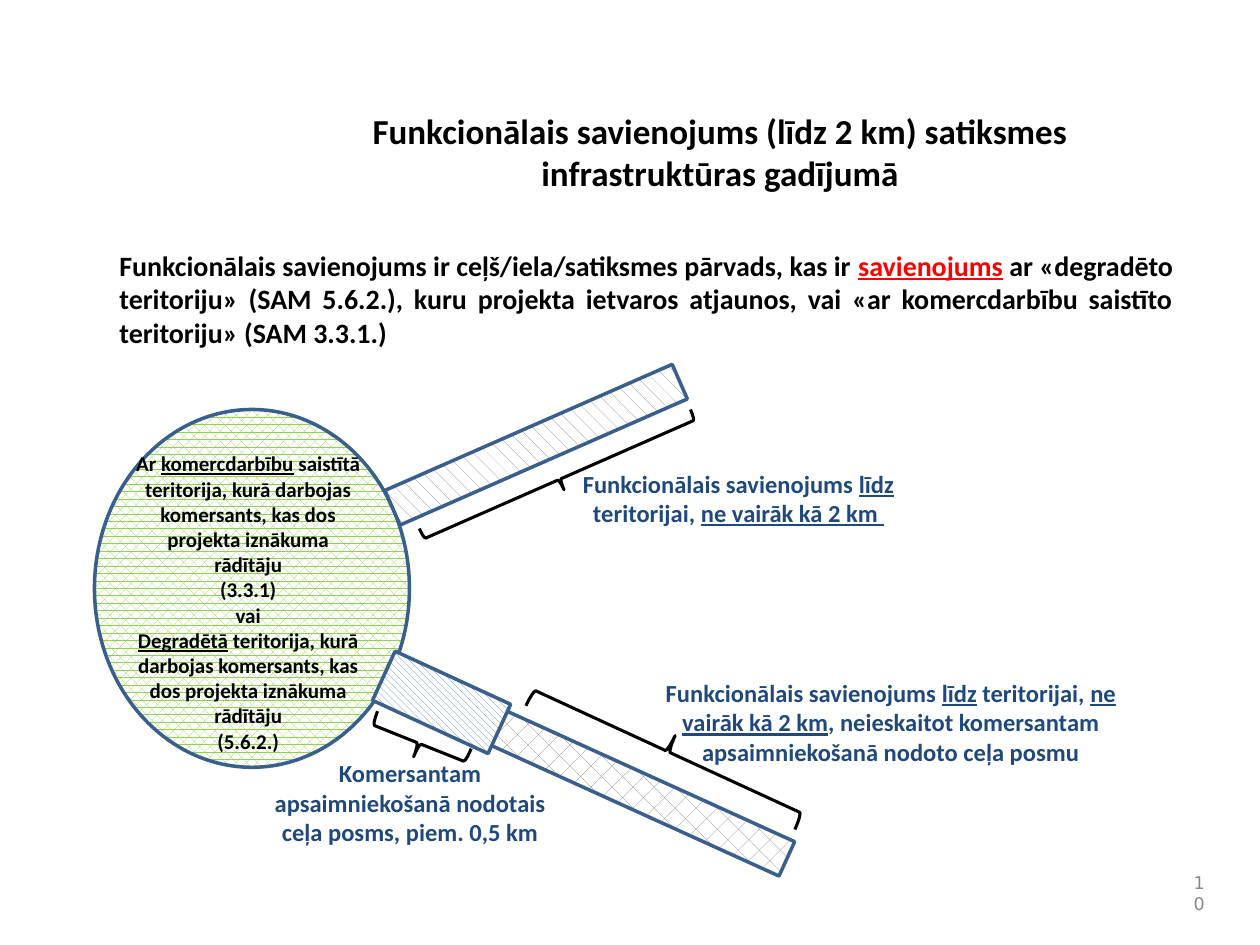
from pptx import Presentation
from pptx import util as u
from pptx.dml.color import RGBColor
from pptx.enum import dml, shapes, text

BLACK, NAVY, RED, GREY, WHITE = "000000", "1F497D", "FF0000", "898989", "FFFFFF"
OUTLINE = "3A5F8C"
RECT = shapes.MSO_SHAPE.RECTANGLE
OVAL = shapes.MSO_SHAPE.OVAL
BRACE = shapes.MSO_SHAPE.RIGHT_BRACE
PATTERN = dml.MSO_PATTERN
ALIGN = text.PP_ALIGN

TITLE = [["Funkcionālais savienojums (līdz 2 km) satiksmes infrastruktūras gadījumā"]]
DEFINITION = [[
    "Funkcionālais savienojums ir ceļš/iela/satiksmes pārvads, kas ir ",
    ("savienojums", RED),
    " ar «degradēto teritoriju» (SAM 5.6.2.), kuru projekta ietvaros atjaunos,"
    " vai «ar komercdarbību saistīto teritoriju» (SAM 3.3.1.)",
]]
TERRITORY = [
    ["Ar ", ("komercdarbību", BLACK),
     " saistītā teritorija, kurā darbojas komersants, kas dos projekta iznākuma rādītāju"],
    ["(3.3.1)"],
    ["vai"],
    [("Degradētā", BLACK),
     " teritorija, kurā darbojas komersants, kas dos projekta iznākuma rādītāju"],
    ["(5.6.2.)"],
]
UPPER_LABEL = [["Funkcionālais savienojums ", ("līdz", NAVY), " teritorijai, ",
                ("ne vairāk kā 2 km ", NAVY)]]
LOWER_LABEL = [["Funkcionālais savienojums ", ("līdz", NAVY), " teritorijai, ",
                ("ne vairāk kā 2 km", NAVY),
                ", neieskaitot komersantam apsaimniekošanā nodoto ceļa posmu"]]
HANDOVER_LABEL = [["Komersantam apsaimniekošanā nodotais ceļa posms, piem. 0,5 km"]]

DIAGRAM = [
    (OVAL, (0.75, 3.25, 2.5, 2.84), 0, (PATTERN.PERCENT_60, "92D050")),
    (RECT, (3.01, 3.38, 2.49, 0.3), 336.3, (PATTERN.SHINGLE, "808080")),
    (BRACE, (4.35, 2.63, 0.18, 2.35), 66.3, None),
    (RECT, (2.93, 5.95, 3.47, 0.3), 24.4, (PATTERN.DIAGONAL_BRICK, "808080")),
    (RECT, (3, 5.36, 1.01, 0.43), 24.7, (PATTERN.WIDE_DOWNWARD_DIAGONAL, "4F81BD")),
    (BRACE, (5.16, 4.79, 0.28, 2.35), 294.7, None),
    (BRACE, (3.21, 5.5, 0.23, 0.8), 111.8, None),
]
TEXTS = [
    (DEFINITION, (0.85, 1.92, 8.56, 1), 16, BLACK, ALIGN.JUSTIFY),
    (TERRITORY, (0.98, 3.53, 1.98, 2.76), 12, BLACK, ALIGN.CENTER),
    (UPPER_LABEL, (4.44, 3.67, 2.84, 0.57), 14, NAVY, ALIGN.CENTER),
    (LOWER_LABEL, (5.09, 5.33, 3.96, 0.81), 14, NAVY, ALIGN.CENTER),
    (HANDOVER_LABEL, (2.02, 5.97, 2.47, 0.81), 14, NAVY, ALIGN.CENTER),
]


def color(value):
    return RGBColor.from_string(value)


def inches(place):
    return [u.Inches(length) for length in place]


def write(box, paragraphs, size, ink, align, anchor=text.MSO_ANCHOR.TOP,
          name="Calibri", bold=True):
    frame = box.text_frame
    frame.word_wrap = True
    frame.auto_size = text.MSO_AUTO_SIZE.NONE
    frame.vertical_anchor = anchor
    for index, pieces in enumerate(paragraphs):
        para = frame.add_paragraph() if index else frame.paragraphs[0]
        para.alignment = align
        para.font.name = name
        para.font.size = u.Pt(size)
        para.font.bold = bold
        para.font.color.rgb = color(ink)
        for piece in pieces:
            span = para.add_run()
            if isinstance(piece, tuple):
                span.text, underlined = piece
                span.font.underline = True
                span.font.color.rgb = color(underlined)
            else:
                span.text = piece


def draw(page, kind, place, angle, pattern):
    shape = page.shapes.add_shape(kind, *inches(place))
    shape.shadow.inherit = False
    shape.rotation = angle
    if pattern:
        shape.fill.patterned()
        shape.fill.pattern, front = pattern
        shape.fill.fore_color.rgb = color(front)
        shape.fill.back_color.rgb = color(WHITE)
    else:
        shape.fill.background()
    shape.line.color.rgb = color(OUTLINE if pattern else BLACK)
    shape.line.width = u.Pt(2 if pattern else 1.75)


def main():
    deck = Presentation()
    deck.slide_width, deck.slide_height = inches((10, 7.5))
    page = deck.slides.add_slide(deck.slide_layouts[5])

    title = page.shapes.title
    title.left, title.top, title.width, title.height = inches((2.38, 0.82, 6.67, 0.88))
    write(title, TITLE, 20, BLACK, ALIGN.CENTER)

    for part in DIAGRAM:
        draw(page, *part)
    for paragraphs, place, size, ink, align in TEXTS:
        write(page.shapes.add_textbox(*inches(place)), paragraphs, size, ink, align)

    number = page.shapes.add_textbox(*inches((9.33, 6.92, 0.33, 0.33)))
    write(number, [["10"]], 10, GREY, ALIGN.RIGHT, text.MSO_ANCHOR.MIDDLE,
          "DejaVu Sans", False)

    deck.save("out.pptx")


if __name__ == "__main__":
    main()
